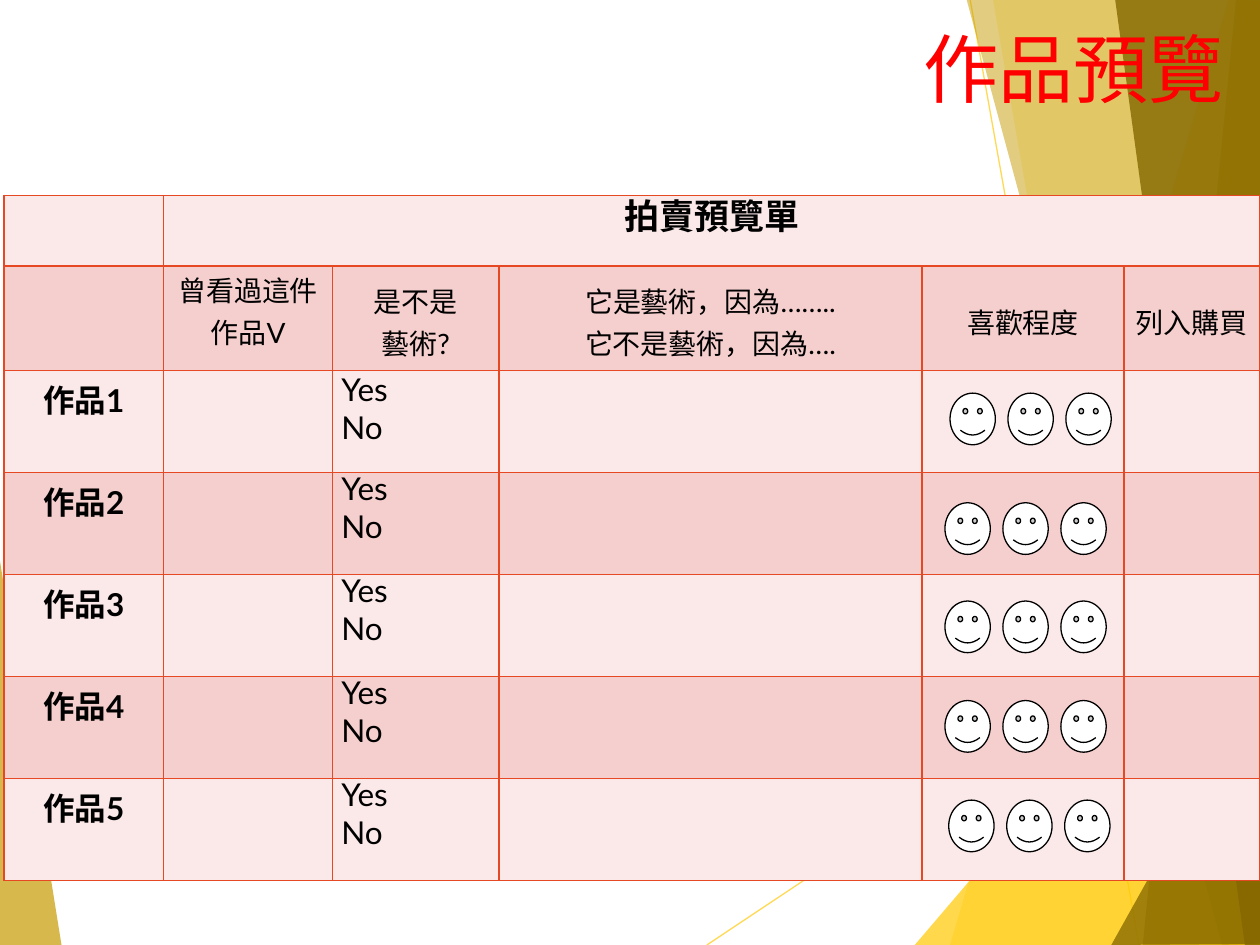
from lxml.etree import SubElement
from pptx import Presentation
from pptx.dml.color import RGBColor
from pptx.enum.shapes import MSO_CONNECTOR, MSO_SHAPE
from pptx.enum.text import MSO_ANCHOR, PP_ALIGN
from pptx.oxml.ns import qn
from pptx.util import Inches, Pt

GOLD = RGBColor(0xFF, 0xCA, 0x08)
OCHRE = RGBColor(0xC5, 0x9B, 0x00)
BROWN = RGBColor(0x84, 0x67, 0x00)
RED = RGBColor(0xFF, 0x00, 0x00)
BLACK = RGBColor(0, 0, 0)
WHITE = RGBColor(0xFF, 0xFF, 0xFF)
BORDER = RGBColor(0xE6, 0x48, 0x23)
BANDS = RGBColor(0xFA, 0xE9, 0xE8), RGBColor(0xF5, 0xCF, 0xCD)
LATO, NOTO = "Lato", "Noto Sans CJK SC"

RAYS = [(5.61, 7.5, 10.01, 4.57), (7.7, 0, 9.04, 7.5)]
FACETS = [  # colour, opacity in percent, corners
    (GOLD, 36, [(9.75, 0), (7.54, 7.5), (10.02, 7.51), (10.01, 0.01)]),
    (GOLD, 20, [(7.88, -0.01), (9.19, 7.5), (10.01, 7.5), (10.01, -0.01)]),
    (GOLD, 72, [(7.26, 7.5), (10, 4.29), (10.01, 7.5)]),
    (OCHRE, 50, [(7.67, -0.01), (9.7, 7.5), (10.01, 7.49), (10.01, -0.01)]),
    (OCHRE, 66, [(9.81, -0.01), (9.07, 7.5), (10.01, 7.5), (10, -0.01)]),
    (BROWN, 80, [(8.85, -0.01), (9.88, 7.5), (10.02, 7.5), (10, -0.01)]),
    (BROWN, 76, [(8.82, 7.5), (10.02, 5.35), (10.02, 7.49)]),
    (OCHRE, 70, [(-0.01, 4.39), (0.49, 7.51), (-0.01, 7.5)]),
]

TITLE = "作品預覽"
SHEET = "拍賣預覽單"
HEADS = [
    ["曾看過這件作品V"],
    ["是不是", "藝術?"],
    ["它是藝術，因為……..", "它不是藝術，因為…."],
    ["喜歡程度"],
    ["列入購買"],
]
WORKS = ["作品1", "作品2", "作品3", "作品4", "作品5"]
CHOICE = ["Yes", "No"]
COLS = [1.27, 1.34, 1.32, 3.36, 1.6, 1.08]
ROWS = [0.56, 0.83] + [0.81] * len(WORKS)
FACES = [(7.54, 3.12), (7.5, 3.99), (7.5, 4.77), (7.5, 5.56), (7.53, 6.35)]
FACE_GAP = 0.46


def fade(fill, percent):
    """Make a solid fill or line colour partly transparent."""
    color = next(fill.iter(qn("a:srgbClr")))
    SubElement(color, qn("a:alpha"), val=str(percent * 1000))


def set_font(font, name, **values):
    font.name = name
    for key, value in values.items():
        setattr(font, key, value)


def add_run(para, text, name, color, **values):
    run = para.add_run()
    run.text = text
    set_font(run.font, name, **values)
    run.font.color.rgb = color
    SubElement(run.font._element, qn("a:ea"), typeface=name)


def write(cell, lines, size, align=PP_ALIGN.CENTER, space=None, bold=False,
          side=0.07, anchor=MSO_ANCHOR.TOP):
    """Fill a cell; space holds the line spacing of each line or is None."""
    cell.margin_left = cell.margin_right = Inches(side)
    cell.margin_top = cell.margin_bottom = 0
    cell.vertical_anchor = anchor
    for i, line in enumerate(lines):
        frame = cell.text_frame
        para = frame.add_paragraph() if i else frame.paragraphs[0]
        para.alignment = align
        if space and space[i]:
            para.line_spacing = Pt(space[i])
        add_run(para, line, LATO, BLACK, size=Pt(size), bold=bold)


def paint(cell, color):
    """Draw the four borders of a cell, then its fill."""
    props = cell._tc.get_or_add_tcPr()
    for tag in ("a:lnL", "a:lnR", "a:lnT", "a:lnB"):
        line = SubElement(props, qn(tag), w=str(Pt(1)))
        solid = SubElement(line, qn("a:solidFill"))
        SubElement(solid, qn("a:srgbClr"), val=str(BORDER))
    cell.fill.solid()
    cell.fill.fore_color.rgb = color


def draw_back(shapes):
    for ends in RAYS:
        ray = shapes.add_connector(MSO_CONNECTOR.STRAIGHT, *map(Inches, ends))
        ray.line.color.rgb = GOLD
        ray.line.width = Pt(0.75)
        props = ray._element.spPr
        fade(props, 70)
        SubElement(props, qn("a:effectLst"))
    for color, percent, corners in FACETS:
        first, *rest = [(Inches(x), Inches(y)) for x, y in corners]
        pen = shapes.build_freeform(*first)
        pen.add_line_segments(rest, close=True)
        facet = pen.convert_to_shape()
        facet.shadow.inherit = False
        facet.fill.solid()
        facet.fill.fore_color.rgb = color
        facet.line.fill.background()
        fade(facet._element.spPr, percent)


def draw_table(shapes):
    frame = shapes.add_table(len(ROWS), len(COLS), Inches(0.03), Inches(1.55),
                             Inches(sum(COLS)), Inches(sum(ROWS)))
    table = frame.table
    table.first_row = table.horz_banding = False
    for col, width in zip(table.columns, COLS):
        col.width = Inches(width)
    for i, (row, height) in enumerate(zip(table.rows, ROWS)):
        row.height = Inches(height)
        for cell in row.cells:
            paint(cell, BANDS[i % 2])

    table.cell(0, 1).merge(table.cell(0, len(COLS) - 1))
    write(table.cell(0, 1), [SHEET], 20, space=[24], bold=True)
    for c, lines in enumerate(HEADS, 1):
        write(table.cell(1, c), lines, 16, space=[24] * len(lines),
              side=0.02 if c < 3 else 0.07,
              anchor=MSO_ANCHOR.TOP if c == 1 else MSO_ANCHOR.MIDDLE)
    for r, work in enumerate(WORKS, 2):
        write(table.cell(r, 0), [work], 18, space=[28], bold=True)
        write(table.cell(r, 2), CHOICE, 18, align=PP_ALIGN.LEFT,
              space=[20, None] if r > 2 else None)


def draw_faces(shapes):
    for left, top in FACES:
        for i in range(3):
            face = shapes.add_shape(
                MSO_SHAPE.SMILEY_FACE, Inches(left + i * FACE_GAP),
                Inches(top), Inches(0.36), Inches(0.41))
            face.shadow.inherit = False
            face.fill.solid()
            face.fill.fore_color.rgb = WHITE
            face.line.color.rgb = BLACK
            face.line.width = Pt(0.75)


def place_title(shapes):
    title = shapes.title
    box = {"left": 2.8, "top": 0.13, "width": 7.01, "height": 1.18}
    for key, value in box.items():
        setattr(title, key, Inches(value))
    title.text_frame.vertical_anchor = MSO_ANCHOR.TOP
    para = title.text_frame.paragraphs[0]
    para.alignment = PP_ALIGN.RIGHT
    add_run(para, TITLE, NOTO, RED, size=Pt(42.9))
    shapes._spTree.append(title._element)  # bring to front


def main():
    deck = Presentation()
    deck.slide_width, deck.slide_height = Inches(10), Inches(7.5)
    shapes = deck.slides.add_slide(deck.slide_layouts[5]).shapes
    draw_back(shapes)
    draw_table(shapes)
    draw_faces(shapes)
    place_title(shapes)
    deck.save("out.pptx")


if __name__ == "__main__":
    main()
